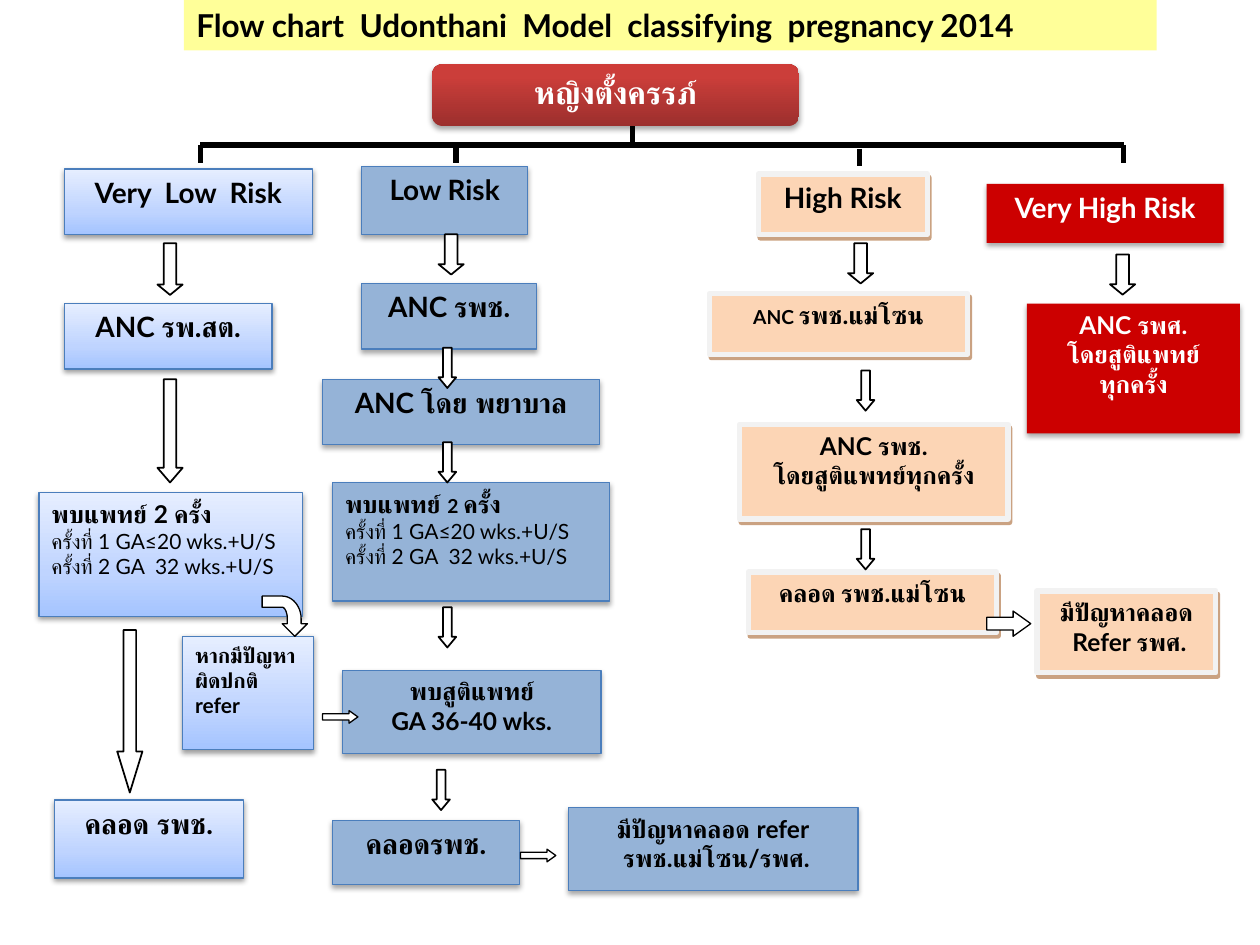
"""Build the flow chart slide that classifies pregnancies by risk."""
from dataclasses import dataclass
from typing import Optional

from lxml.etree import SubElement
from pptx import Presentation
from pptx.dml.color import RGBColor
from pptx.enum.shapes import MSO_CONNECTOR, MSO_SHAPE
from pptx.enum.text import MSO_ANCHOR, MSO_AUTO_SIZE, PP_ALIGN
from pptx.oxml.ns import qn
from pptx.util import Pt

FONT = "Lato"
COLOURS = {
    "black": "000000", "white": "FFFFFF", "yellow": "FFFF99", "blue": "95B3D7",
    "blue edge": "4B7EBC", "peach": "FCD5B5", "peach edge": "F2F2F2",
    "peach shadow": "974706", "red": "CC0000",
    "sky dark": "A4C4FF", "sky mid": "BFD4FF", "sky light": "E6EEFF",
    "crimson dark": "9C2F2D", "crimson mid": "CB3E3A", "crimson light": "CE3B37",
}


@dataclass(frozen=True)
class Shadow:
    colour: str
    opacity: int
    blur: float
    distance: float
    angle: int


@dataclass(frozen=True)
class Style:
    stops: tuple
    edge: Optional[str] = None
    edge_width: float = 0.75
    shadow: Optional[Shadow] = None
    ink: str = "black"


@dataclass(frozen=True)
class Span:
    text: str
    size: float
    bold: bool = True


@dataclass(frozen=True)
class Box:
    place: tuple
    style: Style
    lines: tuple
    align: PP_ALIGN = PP_ALIGN.CENTER
    kind: MSO_SHAPE = MSO_SHAPE.RECTANGLE
    anchor: MSO_ANCHOR = MSO_ANCHOR.TOP


@dataclass(frozen=True)
class Arrow:
    place: tuple
    head: float
    kind: MSO_SHAPE = MSO_SHAPE.DOWN_ARROW
    width: float = 1


SOFT = Shadow("black", 35, 3.1, 1.8, 90)
SKY = Style(((0, "sky dark"), (35, "sky mid"), (100, "sky light")), "blue edge",
            shadow=Shadow("black", 38, 3.1, 1.6, 90))
BLUE = Style(((0, "blue"),), "blue edge", shadow=SOFT)
PEACH = Style(((0, "peach"),), "peach edge", 3, Shadow("peach shadow", 50, 0, 2.2, 63))
RED = Style(((0, "red"),), shadow=SOFT, ink="white")
CRIMSON = Style(((0, "crimson dark"), (80, "crimson mid"), (100, "crimson light")),
                shadow=SOFT, ink="white")
YELLOW = Style(((0, "yellow"),))


def plain(size: float, *texts: str) -> tuple:
    """Return one bold single-span line for each text."""
    return tuple((Span(text, size),) for text in texts)


VISITS = ((Span("ครั้งที่ 1 GA≤20 wks.+U/S", 12, False),),
          (Span("ครั้งที่ 2 GA  32 wks.+U/S", 12, False),))

BOXES = (
    Box((206.6, 95, 95, 38.9), BLUE, plain(16, "Low Risk")),
    Box((36.7, 96.5, 141.8, 37.4), SKY, plain(16, "Very  Low  Risk")),
    Box((433.4, 99.4, 96.5, 34.6), PEACH, plain(16, "High Risk")),
    Box((563.8, 105.1, 135.4, 33.8), RED, plain(16, "Very High Risk")),
    Box((36.7, 173.5, 118.8, 37.4), SKY, plain(16, "ANC รพ.สต.")),
    Box((206.6, 162, 100.1, 37.4), BLUE, plain(16, "ANC รพช.")),
    Box((405.4, 167.8, 147.6, 34.6), PEACH,
        ((Span("ANC ", 11), Span("รพช.แม่โซน", 14)),)),
    Box((586.8, 173.5, 121.7, 74.2), RED,
        plain(14, "ANC รพศ.", "โดยสูติแพทย์", "ทุกครั้ง")),
    Box((22.3, 281.5, 150.5, 70.6), SKY,
        plain(14, "พบแพทย์ 2 ครั้ง") + VISITS, PP_ALIGN.LEFT),
    Box((184.3, 216.7, 158.4, 37.4), BLUE, plain(16, "ANC โดย พยาบาล")),
    Box((190.1, 275.8, 158.4, 67.7), BLUE,
        ((Span("พบแพทย์ ", 14), Span("2 ", 11), Span("ครั้ง", 14)),) + VISITS,
        PP_ALIGN.LEFT),
    Box((195.8, 383, 147.6, 47.5), BLUE, plain(14, "พบสูติแพทย์", "GA 36-40 wks.")),
    Box((104.4, 363.6, 74.9, 64.8), SKY,
        plain(12, "หากมีปัญหาผิดปกติ refer"), PP_ALIGN.LEFT),
    Box((247, 36.7, 209.5, 35.3), CRIMSON, plain(18, "หญิงตั้งครรภ์"),
        kind=MSO_SHAPE.ROUNDED_RECTANGLE),
    Box((31, 457.2, 108, 44.6), SKY, plain(16, "คลอด รพช.")),
    Box((190.1, 468.7, 106.6, 36.7), BLUE, plain(16, "คลอดรพช.")),
    Box((324.7, 461.5, 165.6, 47.5), BLUE,
        plain(14, "มีปัญหาคลอด refer", " รพช.แม่โซน/รพศ.")),
    Box((422.6, 242.6, 153.4, 54), PEACH, plain(14, "ANC รพช.", "โดยสูติแพทย์ทุกครั้ง")),
    Box((427.7, 326.9, 141.8, 34.6), PEACH,
        ((Span("คลอด", 14), Span(" ", 11), Span("รพช.แม่โซน", 14)),)),
    Box((592.6, 337.7, 102.2, 46.8), PEACH, plain(14, "มีปัญหาคลอด", " Refer รพศ.")),
    Box((105.1, 0, 555.8, 28.8), YELLOW,
        plain(18, "Flow chart  Udonthani  Model  classifying  pregnancy 2014"),
        PP_ALIGN.LEFT, anchor=MSO_ANCHOR.MIDDLE),
)

ARROWS = (
    Arrow((90, 139, 14.4, 29.5), 0.41),
    Arrow((90, 216.7, 14.4, 59), 0.58),
    Arrow((67, 360, 14.4, 92.9), 1.63),
    *(Arrow((left, top, 14.4, 23), 0.41)
      for left, top in ((634.3, 145.4), (484.6, 139), (250.6, 133.9))),
    *(Arrow((left, top, 10.1, 23), 0.6)
      for left, top in ((250.6, 198.7), (250.6, 252.7), (250.6, 347), (247, 439.9),
                        (489.6, 211.7), (489.6, 302.4))),
    *(Arrow(place, 0.7, MSO_SHAPE.RIGHT_ARROW, 0.75)
      for place in ((184.3, 406.1, 20.2, 7.2), (297.4, 485.3, 20.2, 7.2),
                    (563.8, 349.2, 25.2, 14.4))),
)

BRANCHES = (
    (361.4, 72, 361.4, 82.8), (114.5, 82.8, 642.2, 82.8), (491, 85, 491, 95),
    *((x, 82.8, x, 92.9) for x in (114.5, 260.6, 642.2)),
)


def rgb(name: str) -> RGBColor:
    """Return the named colour."""
    return RGBColor.from_string(COLOURS[name])


def paint(shape, style: Style) -> None:
    """Apply fill, outline and shadow to a shape."""
    properties = shape.element.spPr
    if len(style.stops) == 1:
        shape.fill.solid()
        shape.fill.fore_color.rgb = rgb(style.stops[0][1])
    else:
        shape.fill.gradient()
        shape.fill.gradient_angle = 90
        stop_list = properties.find(qn("a:gradFill")).find(qn("a:gsLst"))
        for old_stop in list(stop_list):
            stop_list.remove(old_stop)
        for position, name in style.stops:
            stop = SubElement(stop_list, qn("a:gs"), pos=str(position * 1000))
            SubElement(stop, qn("a:srgbClr"), val=COLOURS[name])
    if style.edge:
        shape.line.color.rgb = rgb(style.edge)
        shape.line.width = Pt(style.edge_width)
    else:
        shape.line.fill.background()
    shape.shadow.inherit = False
    if style.shadow:
        shadow = style.shadow
        outer = SubElement(properties.find(qn("a:effectLst")), qn("a:outerShdw"),
                           blurRad=str(int(Pt(shadow.blur))), dist=str(int(Pt(shadow.distance))),
                           dir=str(shadow.angle * 60000), rotWithShape="0")
        colour = SubElement(outer, qn("a:srgbClr"), val=COLOURS[shadow.colour])
        SubElement(colour, qn("a:alpha"), val=str(shadow.opacity * 1000))


def draw_box(page, box: Box) -> None:
    """Draw one labelled box."""
    shape = page.shapes.add_shape(box.kind, *map(Pt, box.place))
    paint(shape, box.style)
    frame = shape.text_frame
    frame.word_wrap = True
    frame.auto_size = MSO_AUTO_SIZE.NONE
    frame.vertical_anchor = box.anchor
    for index, line in enumerate(box.lines):
        para = frame.add_paragraph() if index else frame.paragraphs[0]
        para.alignment = box.align
        for span in line:
            run = para.add_run()
            run.text = span.text
            run.font.name = FONT
            run.font.size = Pt(span.size)
            run.font.bold = span.bold
            run.font.color.rgb = rgb(box.style.ink)


def draw_arrow(page, arrow: Arrow) -> None:
    """Draw one white block arrow."""
    shape = page.shapes.add_shape(arrow.kind, *map(Pt, arrow.place))
    shape.adjustments[1] = arrow.head
    paint(shape, Style(((0, "white"),), "black", arrow.width))


def draw_branch(page, ends: tuple) -> None:
    """Draw one thick straight line of the tree."""
    branch = page.shapes.add_connector(MSO_CONNECTOR.STRAIGHT, *map(Pt, ends))
    branch.line.color.rgb = rgb("black")
    branch.line.width = Pt(3)
    SubElement(branch.element.spPr, qn("a:effectLst"))


def curve(*controls: tuple, steps: int = 12) -> list:
    """Return points along a cubic curve through four controls."""
    return [tuple(sum(weight * point[axis] for weight, point in zip(
        ((1 - t) ** 3, 3 * t * (1 - t) ** 2, 3 * t * t * (1 - t), t ** 3), controls))
        for axis in (0, 1)) for t in (step / steps for step in range(steps + 1))]


def draw_bent_arrow(page) -> None:
    """Draw the arrow that bends down to the referral box."""
    outer = curve((172.1, 353.5), (172.1, 346.3), (167, 340.6), (161.3, 340.6))
    inner = curve((161.3, 347), (162.7, 347), (164.2, 349.9), (164.2, 353.5))
    points = [(168.5, 363.6), (175.7, 356.4), (172.1, 356.4), *outer,
              (149.8, 340.6), (149.8, 347), *inner, (164.2, 356.4), (161.3, 356.4)]
    corners = [(Pt(x), Pt(y)) for x, y in points]
    builder = page.shapes.build_freeform(*corners[0])
    builder.add_line_segments(corners[1:], close=True)
    paint(builder.convert_to_shape(), Style(((0, "white"),), "black"))


def main() -> None:
    """Build and save the deck."""
    deck = Presentation()
    deck.slide_width, deck.slide_height = Pt(720), Pt(540)
    page = deck.slides.add_slide(deck.slide_layouts[6])
    for box in BOXES:
        draw_box(page, box)
    for arrow in ARROWS:
        draw_arrow(page, arrow)
    draw_bent_arrow(page)
    for ends in BRANCHES:
        draw_branch(page, ends)
    deck.save("out.pptx")


if __name__ == "__main__":
    main()
